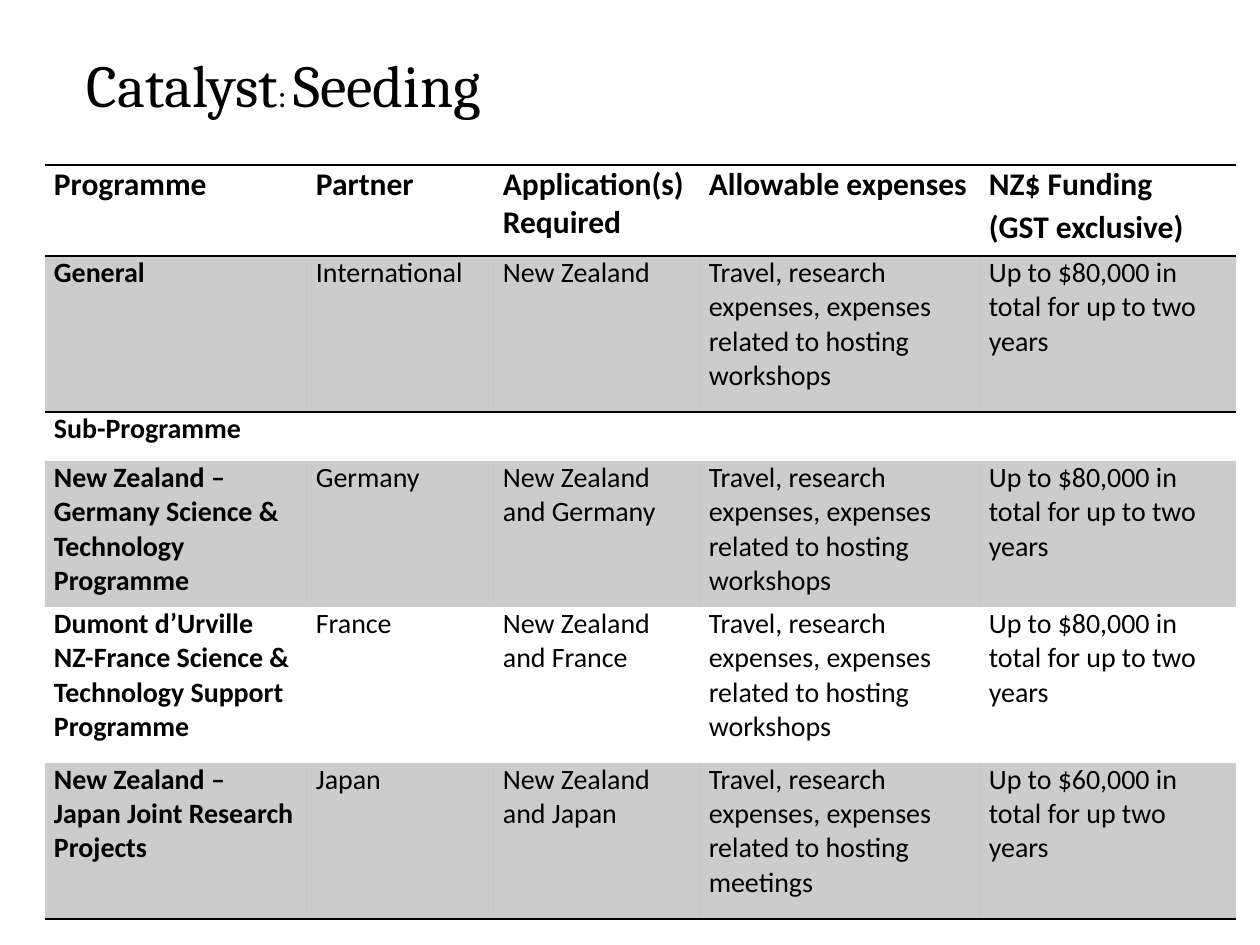
from lxml import etree
from pptx import Presentation
from pptx.dml.color import RGBColor
from pptx.enum.text import MSO_ANCHOR, MSO_AUTO_SIZE, PP_ALIGN
from pptx.oxml.ns import qn
from pptx.util import Emu, Pt

LEFT, JUST = PP_ALIGN.LEFT, PP_ALIGN.JUSTIFY
TOP, GROW = MSO_ANCHOR.TOP, MSO_AUTO_SIZE.SHAPE_TO_FIT_TEXT
BLACK = RGBColor(0, 0, 0)
SCALE = 914400 / 126
PLAIN = "{2D5ABB26-0587-4C30-8999-92F81FD0307C}"  # table style without grid
SHADE = 20  # percent of black
TITLE_ONLY = 5

BIG = {"name": "Cambria", "size": Pt(34)}
SMALL = {"name": "Calibri", "size": Pt(18)}
HEAD = {"name": "Calibri", "size": Pt(18), "bold": True}
BODY = {"name": "Calibri", "size": Pt(16), "bold": False}
LABEL = {**BODY, "bold": True}

COLS = [262, 187, 206, 280, 256]
HEIGHTS = [91, 156, 49, 146, 156, 156]
COSTS = "Travel, research expenses, expenses related to hosting "
FUNDS = "Up to $80,000 in total for up to two years"
ROWS = [
    ["Programme", "Partner", "Application(s) Required",
     "Allowable expenses", "NZ$ Funding\n(GST exclusive)"],
    ["General", "International", "New Zealand", COSTS + "workshops", FUNDS],
    ["Sub-Programme"],
    ["New Zealand – Germany Science & Technology Programme", "Germany",
     "New Zealand and Germany", COSTS + "workshops", FUNDS],
    ["Dumont d’Urville NZ-France Science & Technology Support Programme",
     "France", "New Zealand and France", COSTS + "workshops", FUNDS],
    ["New Zealand – Japan Joint Research Projects", "Japan",
     "New Zealand and Japan", COSTS + "meetings",
     "Up to $60,000 in total for up two years"],
]
SHADED = {1, 3, 5}
RULES = {0: ("lnT", "lnB"), 1: ("lnT",), 5: ("lnB",)}


def px(n):
    return Emu(round(n * SCALE))


def style(font, look):
    for key, val in look.items():
        setattr(font, key, val)
    font.color.rgb = BLACK


def rule(cell, side):
    line = etree.SubElement(cell._tc.get_or_add_tcPr(), qn("a:" + side),
                            w=str(Pt(1)))
    fill = etree.SubElement(line, qn("a:solidFill"))
    etree.SubElement(fill, qn("a:srgbClr"), val=str(BLACK))


def shade(cell):
    cell.fill.solid()
    cell.fill.fore_color.rgb = BLACK
    tone = cell._tc.tcPr.find(".//" + qn("a:solidFill") + "[last()]")
    tone = cell._tc.tcPr.find(qn("a:solidFill")).find(qn("a:srgbClr"))
    etree.SubElement(tone, qn("a:alpha"), val=str(SHADE * 1000))


def write(cell, text, look, align):
    cell.margin_left = cell.margin_right = px(9)
    cell.margin_top = cell.margin_bottom = 0
    cell.vertical_anchor = TOP
    cell.text = text
    for i, para in enumerate(cell.text_frame.paragraphs):
        para.alignment = align
        if i:
            para.space_before = Pt(2.9)
        style(para.runs[0].font, look)


def add_title(slide, x, y, w, h):
    title = slide.shapes.title
    title.left, title.top, title.width, title.height = map(px, (x, y, w, h))
    frame = title.text_frame
    frame.word_wrap = True
    frame.auto_size = GROW
    frame.vertical_anchor = TOP
    para = frame.paragraphs[0]
    para.alignment = LEFT
    for text, look in (("Catalyst", BIG), (": ", SMALL), ("Seeding", BIG)):
        run = para.add_run()
        run.text = text
        style(run.font, look)


def add_grants(slide, x, y):
    box = map(px, (x, y, sum(COLS), sum(HEIGHTS)))
    table = slide.shapes.add_table(len(ROWS), len(COLS), *box).table
    props = table._tbl.tblPr
    props.find(qn("a:tableStyleId")).text = PLAIN
    table.horz_banding = False
    for col, wide in zip(table.columns, COLS):
        col.width = px(wide)
    for r, (row, high, texts) in enumerate(zip(table.rows, HEIGHTS, ROWS)):
        row.height = px(high)
        span = len(texts) == 1
        if span:
            table.cell(r, 0).merge(table.cell(r, len(COLS) - 1))
        align = JUST if r == 0 or span else LEFT
        for c, text in enumerate(texts):
            cell = table.cell(r, c)
            look = HEAD if r == 0 else BODY if c else LABEL
            write(cell, text, look, align)
            for side in RULES.get(r, ()):
                rule(cell, side)
            if r in SHADED:
                shade(cell)


def main():
    deck = Presentation()
    deck.slide_width, deck.slide_height = px(1260), px(945)
    slide = deck.slides.add_slide(deck.slide_layouts[TITLE_ONLY])
    add_title(slide, 74, 42, 465, 84)
    add_grants(slide, 45, 165)
    deck.save("out.pptx")


if __name__ == "__main__":
    main()
